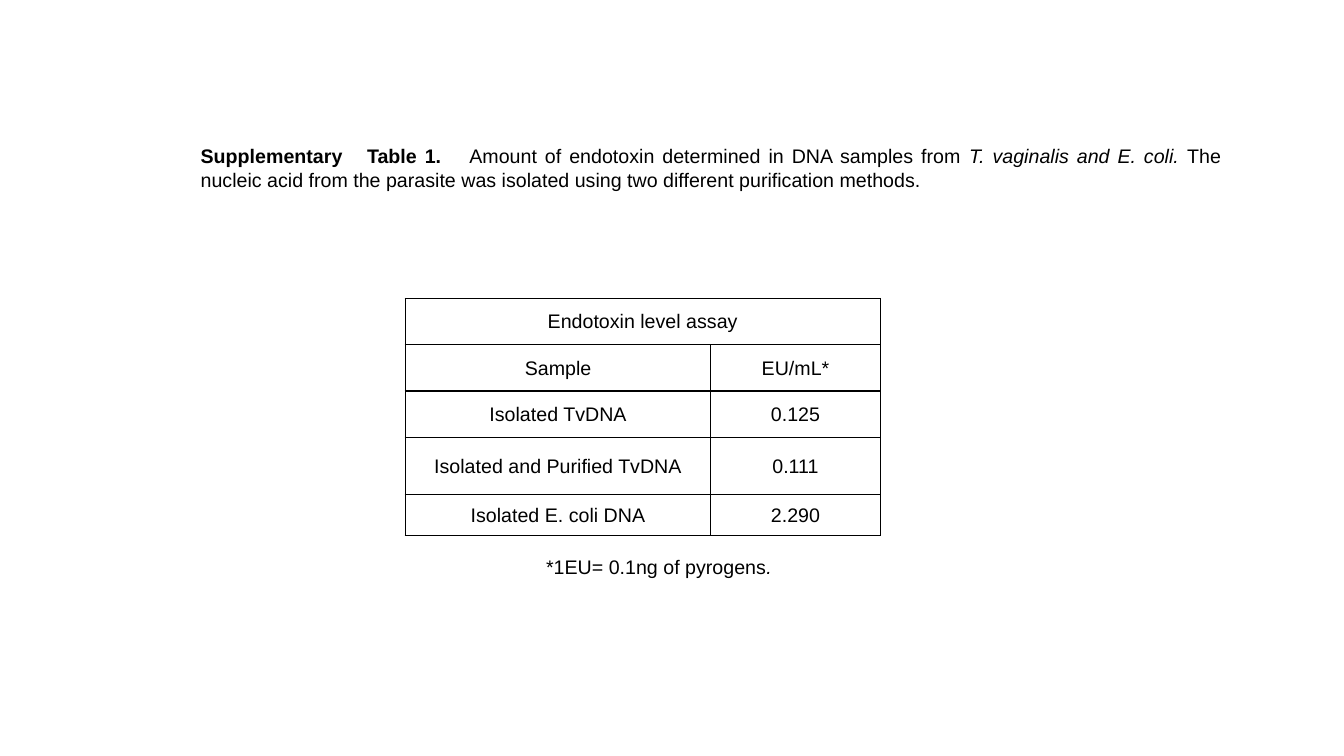
from dataclasses import dataclass

from lxml.etree import SubElement
from pptx import Presentation
from pptx.dml.color import RGBColor
from pptx.enum.text import MSO_ANCHOR, MSO_AUTO_SIZE, PP_ALIGN
from pptx.oxml.ns import qn
from pptx.util import Inches, Pt


@dataclass(frozen=True)
class Theme:
    font: str = "Arial"
    ink: str = "000000"
    size: int = 14
    rule: int = 1


THEME = Theme()

CAPTION = [
    ("Supplementary\tTable 1.\t", {"bold": True}),
    ("Amount of endotoxin determined in DNA samples from ", {}),
    ("T. vaginalis and E. coli. ", {"italic": True}),
    ("The nucleic acid from the parasite was isolated using two different "
     "purification methods.", {}),
]
CAPTION_TABS = [1.65, 2.64]
FOOTNOTE = [("*1EU= 0.1ng of pyrogens", {}), (".", {"italic": True})]

ASSAY_HEADING = "Endotoxin level assay"
ASSAY_ROWS = [
    ("Sample", "EU/mL*"),
    ("Isolated TvDNA", "0.125"),
    ("Isolated and Purified TvDNA", "0.111"),
    ("Isolated E. coli DNA", "2.290"),
]
COLUMN_WIDTHS = [3.03, 1.68]
ROW_HEIGHTS = [0.46, 0.46, 0.46, 0.57, 0.4]


def set_all(target, values):
    for name, value in values.items():
        setattr(target, name, value)


def place(shape, left, top, width, height):
    set_all(shape, {"left": Inches(left), "top": Inches(top),
                    "width": Inches(width), "height": Inches(height)})


def add_tabs(para, stops):
    tab_list = SubElement(para._p.get_or_add_pPr(), qn("a:tabLst"))
    for stop in stops:
        SubElement(tab_list, qn("a:tab"), pos=str(Inches(stop)), algn="l")


def write(para, spans, align):
    para.alignment = align
    for text, emphasis in spans:
        span = para.add_run()
        span.text = text
        set_all(span.font, {"name": THEME.font, "size": Pt(THEME.size),
                            "bold": False, "italic": False, **emphasis})
        span.font.color.rgb = RGBColor.from_string(THEME.ink)


def fill_text(box, spans, align, tabs=()):
    frame = box.text_frame
    set_all(frame, {"word_wrap": True, "vertical_anchor": MSO_ANCHOR.TOP,
                    "auto_size": MSO_AUTO_SIZE.SHAPE_TO_FIT_TEXT})
    para = frame.paragraphs[0]
    if tabs:
        add_tabs(para, tabs)
    write(para, spans, align)


def add_borders(cell):
    properties = cell._tc.get_or_add_tcPr()
    for side in ("a:lnL", "a:lnR", "a:lnT", "a:lnB"):
        line = SubElement(properties, qn(side), w=str(Pt(THEME.rule)))
        fill = SubElement(line, qn("a:solidFill"))
        SubElement(fill, qn("a:srgbClr"), val=THEME.ink)


def format_cell(cell):
    add_borders(cell)
    cell.fill.background()
    set_all(cell, {"vertical_anchor": MSO_ANCHOR.MIDDLE,
                   "margin_left": Inches(0.01), "margin_right": Inches(0.01),
                   "margin_top": Inches(0.01), "margin_bottom": 0})


def add_assay_table(page):
    rows = [(ASSAY_HEADING, ""), *ASSAY_ROWS]
    table = page.shapes.add_table(
        len(rows), len(COLUMN_WIDTHS), Inches(4.02), Inches(2.96),
        Inches(sum(COLUMN_WIDTHS)), Inches(sum(ROW_HEIGHTS))).table
    set_all(table, {"first_row": False, "horz_banding": False})
    for column, width in zip(table.columns, COLUMN_WIDTHS):
        column.width = Inches(width)
    for row, height, texts in zip(table.rows, ROW_HEIGHTS, rows):
        row.height = Inches(height)
        for cell, text in zip(row.cells, texts):
            format_cell(cell)
            if text:
                write(cell.text_frame.paragraphs[0], [(text, {})],
                      PP_ALIGN.CENTER)
    table.cell(0, 0).merge(table.cell(0, 1))


def main():
    deck = Presentation()
    set_all(deck, {"slide_width": Inches(13.33), "slide_height": Inches(7.5)})
    page = deck.slides.add_slide(deck.slide_layouts.get_by_name("Title Only"))

    caption = page.shapes.title
    place(caption, 1.89, 1.38, 10.32, 0.57)
    fill_text(caption, CAPTION, PP_ALIGN.JUSTIFY, CAPTION_TABS)

    add_assay_table(page)

    footnote = page.shapes.add_textbox(
        Inches(5.06), Inches(5.46), Inches(2.95), Inches(0.34))
    fill_text(footnote, FOOTNOTE, PP_ALIGN.CENTER)

    deck.save("out.pptx")


if __name__ == "__main__":
    main()
